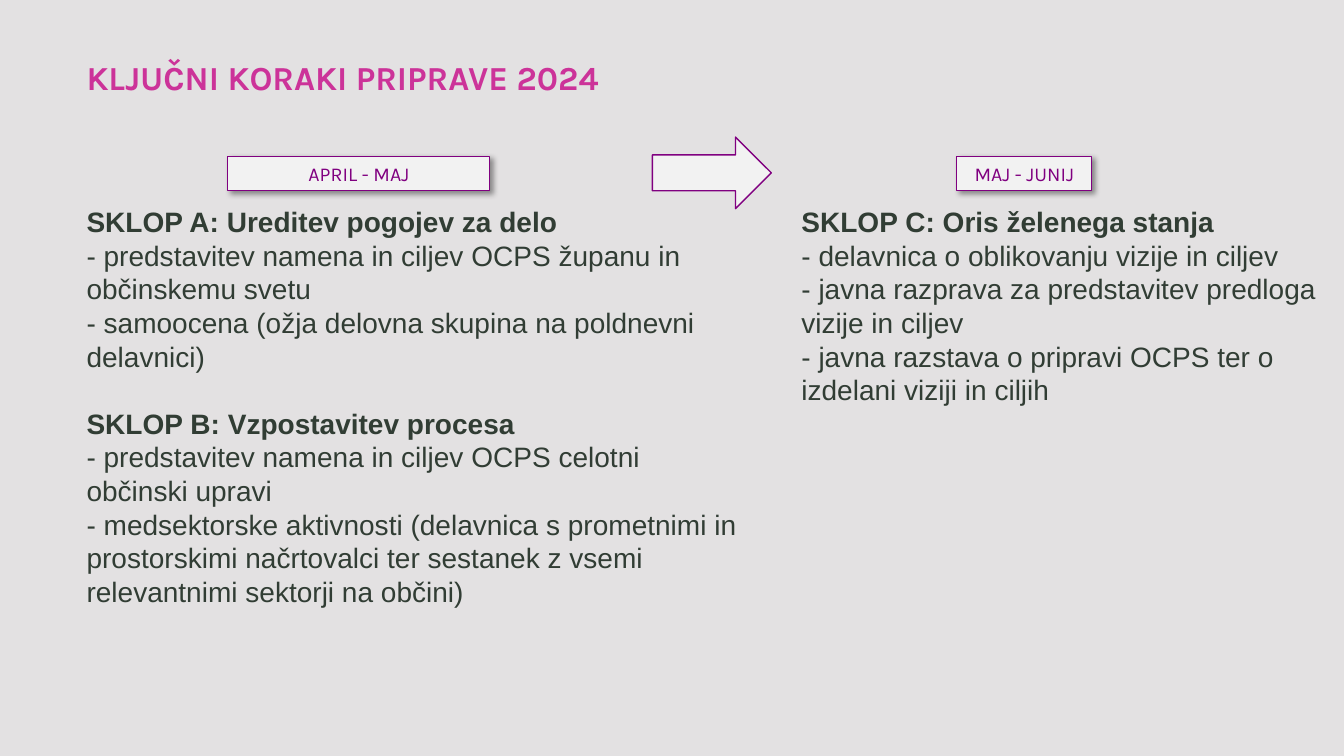
import dataclasses
import lxml.etree
import pptx
import pptx.util
import pptx.dml.color
import pptx.enum.shapes
import pptx.enum.text
import pptx.oxml
import pptx.oxml.ns

Inches = pptx.util.Inches
Pt = pptx.util.Pt
KIND = pptx.enum.shapes.MSO_SHAPE
ALIGN = pptx.enum.text.PP_ALIGN
ANCHOR = pptx.enum.text.MSO_ANCHOR

COLORS = {"back": "E3E1E2", "title": "CC3399", "body": "313D34",
          "fill": "F2F2F2", "line": "800080"}


@dataclasses.dataclass
class Box:
    left: float
    top: float
    width: float
    height: float

    def place(self) -> tuple:
        return tuple(Inches(v) for v in dataclasses.astuple(self))


@dataclasses.dataclass
class Block:
    head: str
    steps: list[str]


@dataclasses.dataclass
class Column:
    box: Box
    blocks: list[Block]


@dataclasses.dataclass
class Label:
    box: Box
    text: str


def color(name: str) -> pptx.dml.color.RGBColor:
    return pptx.dml.color.RGBColor.from_string(COLORS[name])


def write(para, text: str, *, size=20, font="Arial", tone="body", bold=False,
          align=ALIGN.LEFT, before=0, pitch=None) -> None:
    para.alignment = align
    para.space_before = Pt(before)
    if pitch:
        para.line_spacing = Pt(pitch)
    run = para.add_run()
    run.text = text
    run.font.size = Pt(size)
    run.font.name = font
    run.font.bold = bold
    run.font.color.rgb = color(tone)


def add_text(slide, box: Box):
    frame = slide.shapes.add_textbox(*box.place()).text_frame
    frame.word_wrap = True
    return frame


def add_column(slide, column: Column) -> None:
    frame = add_text(slide, column.box)
    para = frame.paragraphs[0]
    for i, block in enumerate(column.blocks):
        if i:
            para = frame.add_paragraph()
        write(para, block.head, bold=True, before=24 if i else 0, pitch=24)
        for step in block.steps:
            write(frame.add_paragraph(), step, pitch=24)


def add_shape(slide, kind, box: Box, weight: float):
    shape = slide.shapes.add_shape(kind, *box.place())
    shape.shadow.inherit = False
    shape.fill.solid()
    shape.fill.fore_color.rgb = color("fill")
    shape.line.color.rgb = color("line")
    shape.line.width = Pt(weight)
    return shape


def add_shadow(shape) -> None:
    qn = pptx.oxml.ns.qn
    effects = shape._element.spPr.find(qn("a:effectLst"))
    outer = lxml.etree.SubElement(
        effects, qn("a:outerShdw"), blurRad=str(Pt(4)), dist=str(Pt(3)),
        dir=str(45 * 60000), algn="tl", rotWithShape="0")
    black = lxml.etree.SubElement(outer, qn("a:srgbClr"), val="000000")
    lxml.etree.SubElement(black, qn("a:alpha"), val="40000")


def add_label(slide, label: Label) -> None:
    shape = add_shape(slide, KIND.RECTANGLE, label.box, 0.75)
    add_shadow(shape)
    frame = shape.text_frame
    frame.word_wrap = True
    frame.vertical_anchor = ANCHOR.MIDDLE
    write(frame.paragraphs[0], label.text, size=14, font="Karla",
          tone="line", align=ALIGN.CENTER)


COLUMNS = [
    Column(Box(0.76, 1.98, 6.69, 4.12), [
        Block("SKLOP A: Ureditev pogojev za delo", [
            "- predstavitev namena in ciljev OCPS županu in občinskemu svetu",
            "- samoocena (ožja delovna skupina na poldnevni delavnici)"]),
        Block("SKLOP B: Vzpostavitev procesa", [
            "- predstavitev namena in ciljev OCPS celotni občinski upravi",
            "- medsektorske aktivnosti (delavnica s prometnimi in prostorskimi "
            "načrtovalci ter sestanek z vsemi relevantnimi sektorji na občini)"]),
    ]),
    Column(Box(7.85, 1.98, 5.35, 2.12), [
        Block("SKLOP C: Oris želenega stanja", [
            "- delavnica o oblikovanju vizije in ciljev",
            "- javna razprava za predstavitev predloga vizije in ciljev",
            "- javna razstava o pripravi OCPS ter o izdelani viziji in ciljih"]),
    ]),
]
LABELS = [Label(Box(2.26, 1.55, 2.6, 0.34), "APRIL - MAJ"),
          Label(Box(9.49, 1.55, 1.34, 0.34), "MAJ - JUNIJ")]


def main() -> None:
    deck = pptx.Presentation()
    deck.slide_width, deck.slide_height = Inches(13.33), Inches(7.5)
    slide = deck.slides.add_slide(deck.slide_layouts[6])
    slide.background.fill.solid()
    slide.background.fill.fore_color.rgb = color("back")

    # Title
    title = add_text(slide, Box(0.76, 0.52, 6.69, 0.5))
    write(title.paragraphs[0], "KLJUČNI KORAKI PRIPRAVE 2024",
          size=24, font="Karla", tone="title", bold=True)

    # Periods and their steps
    for label in LABELS:
        add_label(slide, label)
    for column in COLUMNS:
        add_column(slide, column)

    # Arrow to the next period
    add_shape(slide, KIND.RIGHT_ARROW, Box(6.47, 1.36, 1.18, 0.71), 1)

    deck.save("out.pptx")


if __name__ == "__main__":
    main()
